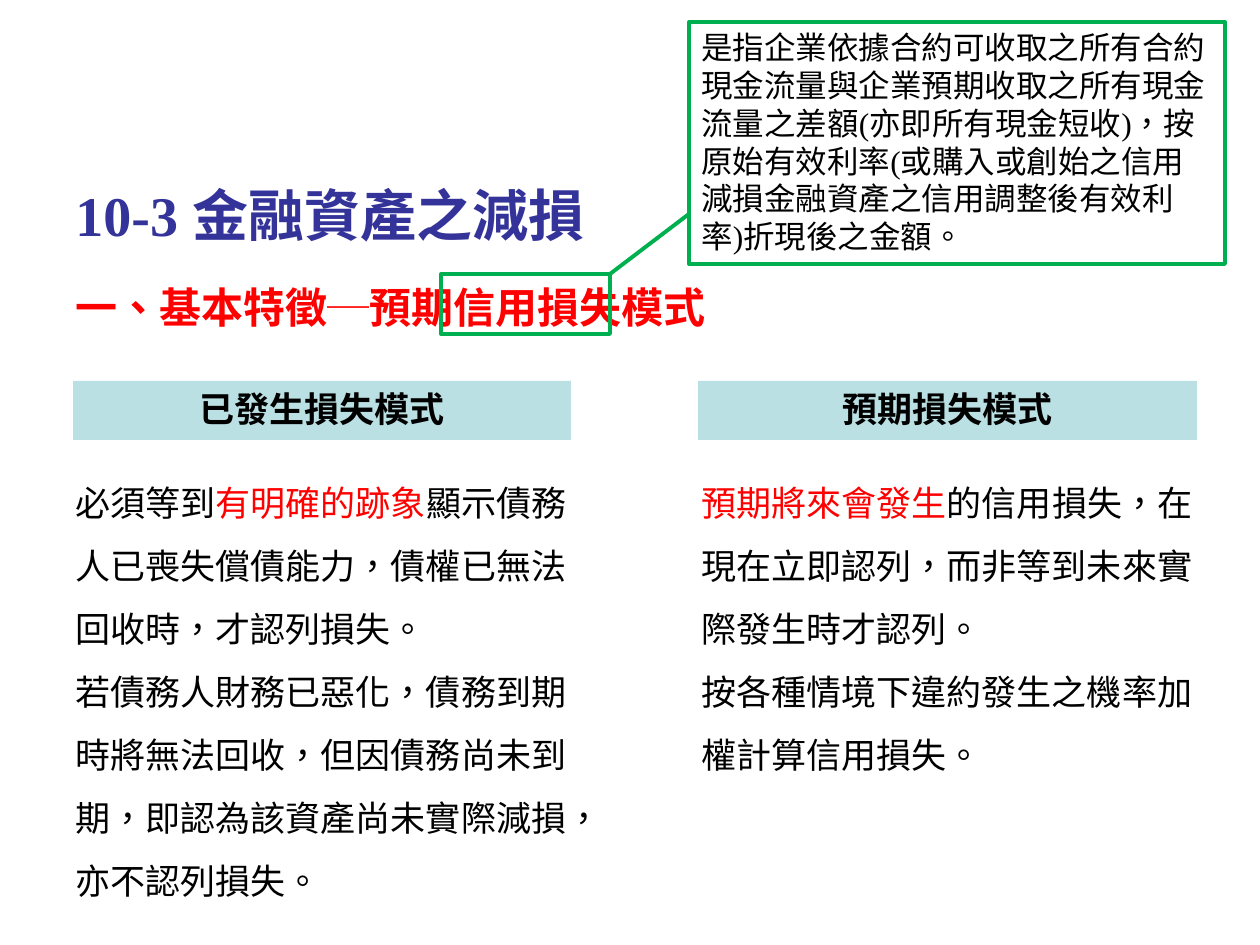
"""Build the slide that compares the incurred and expected loss models."""
import pptx
import pptx.dml.color
import pptx.enum.shapes
import pptx.enum.text
import pptx.oxml.ns
import pptx.util
from lxml import etree

PX = 914400 / 126
THEME = {
    "latin": "Times New Roman", "asian": "Noto Sans CJK SC",
    "title": "333399", "accent": "FF0000", "text": "000000",
    "outline": "00B050", "band": "BBE0E3", "line": 2.25,
    "title_size": 32, "heading_size": 24, "body_size": 20, "callout_size": 18,
}


def add_box(slide, box, fill=None, outline=None):
    shape = slide.shapes.add_shape(
        pptx.enum.shapes.MSO_SHAPE.RECTANGLE, *[round(value * PX) for value in box])
    shape.shadow.inherit = False
    shape.fill.background()
    shape.line.fill.background()
    if fill:
        shape.fill.solid()
        shape.fill.fore_color.rgb = pptx.dml.color.RGBColor.from_string(fill)
    if outline:
        shape.line.color.rgb = pptx.dml.color.RGBColor.from_string(outline)
        shape.line.width = pptx.util.Pt(THEME["line"])
    return shape


def write(shape, paragraphs, size, bold=False, latin=THEME["latin"], align="LEFT",
          anchor="TOP", spacing=None):
    frame = shape.text_frame
    frame.word_wrap = True
    frame.vertical_anchor = pptx.enum.text.MSO_ANCHOR[anchor]
    for index, parts in enumerate(paragraphs):
        paragraph = frame.paragraphs[0] if index == 0 else frame.add_paragraph()
        paragraph.alignment = pptx.enum.text.PP_ALIGN[align]
        paragraph.line_spacing = spacing
        for text, color in parts:
            run = paragraph.add_run()
            run.text = text
            run.font.size = pptx.util.Pt(THEME[size])
            run.font.bold = bold
            run.font.name = latin
            run.font.color.rgb = pptx.dml.color.RGBColor.from_string(THEME[color])
            properties = run.font._element
            properties.set("lang", "zh-TW")
            asian = etree.Element(pptx.oxml.ns.qn("a:ea"), typeface=THEME["asian"])
            properties.find(pptx.oxml.ns.qn("a:latin")).addnext(asian)


presentation = pptx.Presentation()
presentation.slide_width = round(1260 * PX)
presentation.slide_height = round(945 * PX)
slide = presentation.slides.add_slide(presentation.slide_layouts[6])

for text, box, size, color, anchor in [
    ("10-3 金融資產之減損", (63, 155, 1134, 118), "title_size", "title", "MIDDLE"),
    ("一、基本特徵─預期信用損失模式", (63, 275, 1134, 70), "heading_size", "accent", "TOP"),
]:
    text_box = slide.shapes.add_textbox(*[round(value * PX) for value in box])
    write(text_box, [[(text, color)]], size, bold=True, anchor=anchor)

add_box(slide, (441, 274, 169, 60), outline=THEME["outline"])
callout = add_box(slide, (689, 22, 536, 242), outline=THEME["outline"])
write(callout, [[(
    "是指企業依據合約可收取之所有合約現金流量與企業預期收取之所有現金流量之差額"
    "(亦即所有現金短收)，按原始有效利率(或購入或創始之信用減損金融資產之信用調整後"
    "有效利率)折現後之金額。", "text")]], "callout_size")

connector = slide.shapes.add_connector(
    pptx.enum.shapes.MSO_CONNECTOR.STRAIGHT,
    *[round(value * PX) for value in (610, 274, 689, 214)])
connector.line.color.rgb = pptx.dml.color.RGBColor.from_string(THEME["outline"])
connector.line.width = pptx.util.Pt(THEME["line"])
etree.SubElement(connector._element.spPr, pptx.oxml.ns.qn("a:effectLst"))

columns = [
    (63, 73, 498, "已發生損失模式", [
        [("必須等到", "text"), ("有明確的跡象", "accent"),
         ("顯示債務人已喪失償債能力，債權已無法回收時，才認列損失。", "text")],
        [("若債務人財務已惡化，債務到期時將無法回收，但因債務尚未到期，"
          "即認為該資產尚未實際減損，亦不認列損失。", "text")],
    ]),
    (689, 698, 499, "預期損失模式", [
        [("預期將來會發生", "accent"),
         ("的信用損失，在現在立即認列，而非等到未來實際發生時才認列。", "text")],
        [("按各種情境下違約發生之機率加權計算信用損失。", "text")],
    ]),
]
for body_left, band_left, band_width, heading, paragraphs in columns:
    body = slide.shapes.add_textbox(
        *[round(value * PX) for value in (body_left, 454, 525, 451)])
    write(body, paragraphs, "body_size", spacing=1.5)
    band = add_box(slide, (band_left, 381, band_width, 59), fill=THEME["band"])
    write(band, [[(heading, "text")]], "body_size", bold=True,
          latin=THEME["asian"], align="CENTER")

presentation.save("out.pptx")
